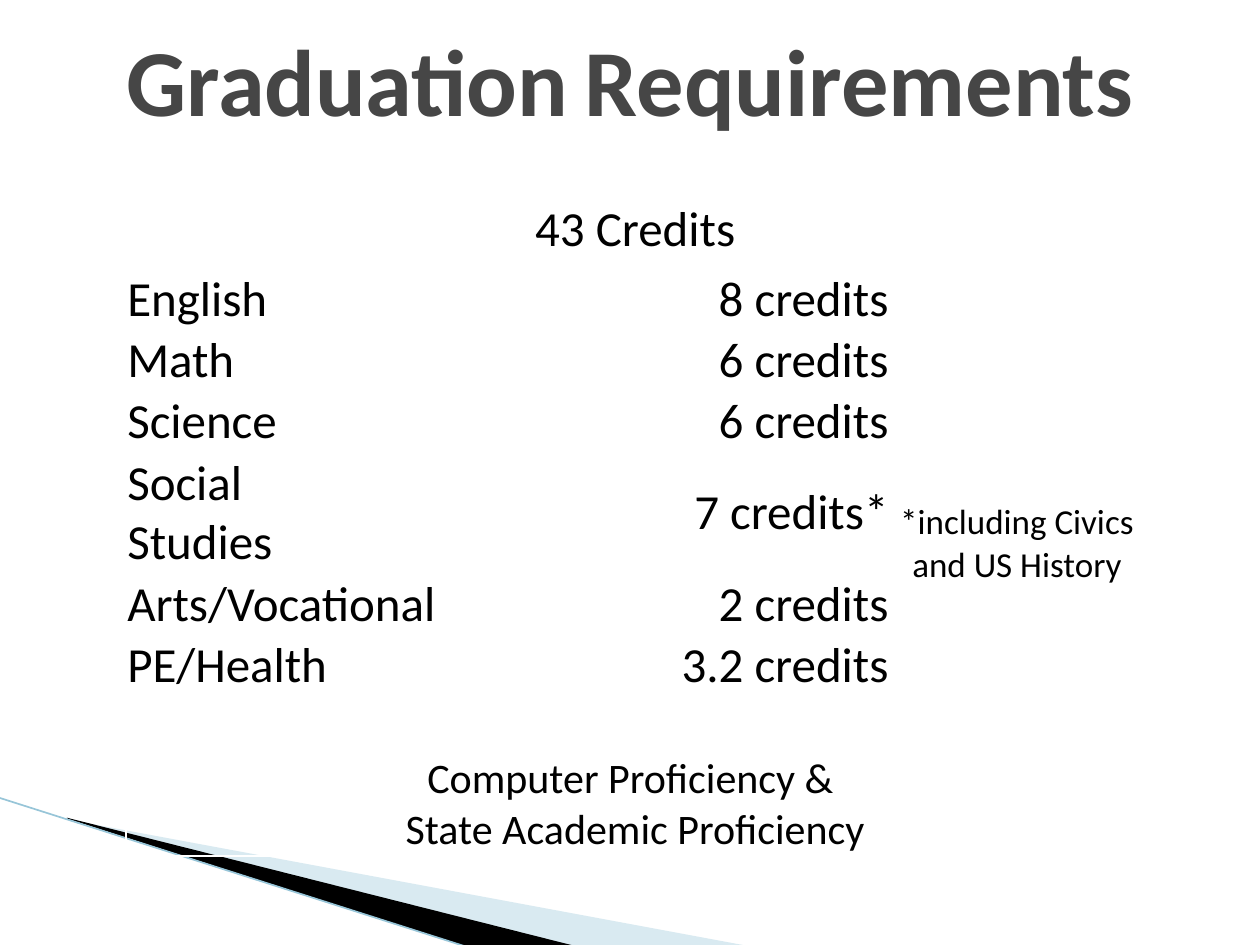
from lxml.etree import SubElement
from pptx import Presentation
from pptx.dml.color import RGBColor
from pptx.enum.shapes import MSO_CONNECTOR as Connector
from pptx.enum.text import MSO_ANCHOR as Anchor, PP_ALIGN as Align
from pptx.oxml import parse_xml
from pptx.oxml.ns import nsdecls, qn
from pptx.util import Pt

COLORS = {"title": "464646", "text": "000000", "border": "FFFFFF",
          "pale": "A0CBDC", "dark": "000000", "edge": "97C5D8"}
FONT = "Calibri"
TITLE = [("Graduation", 54), (" ", 41), ("Requirements", 54)]
TOTAL = "43 Credits"
SUBJECTS = [
    ("English", "8 credits"),
    ("Math", "6 credits"),
    ("Science", "6 credits"),
    ("Social Studies", "7 credits*"),
    ("Arts/Vocational", "2 credits"),
    ("PE/Health", "3.2 credits"),
]
FOOTNOTE = "*including Civics and US History"
PROFICIENCIES = ["Computer Proficiency & ", "State Academic Proficiency"]
WEDGES = [
    ("pale", 40, [(39.6, 468.5), (428.4, 540.7), (328.3, 540.7), (39.6, 468)]),
    ("dark", 100, [(38.2, 467.3), (329, 540.7), (267.8, 541.4), (38.9, 468)]),
]
EDGE = [(-0.7, 455.8), (267.8, 541.4)]
COLUMN_WIDTH, HEADER_HEIGHT, ROW_HEIGHT = 145.5, 45.4, 32.4
SOCIAL_ROW, ARTS_ROW, LAST_ROW = 4, 5, 8


def rgb(name):
    return RGBColor.from_string(COLORS[name])


def add_run(paragraph, text, size, color="text", bold=False):
    run = paragraph.add_run()
    run.text = text
    run.font.name, run.font.size, run.font.bold = FONT, Pt(size), bold
    run.font.color.rgb = rgb(color)


def add_wedge(shapes, color, opacity, corners):
    points = [(Pt(x), Pt(y)) for x, y in corners]
    builder = shapes.build_freeform(*points[0], scale=1.0)
    builder.add_line_segments(points[1:], close=True)
    wedge = builder.convert_to_shape()
    wedge.shadow.inherit = False
    wedge.line.fill.background()
    wedge.fill.solid()
    wedge.fill.fore_color.rgb = rgb(color)
    if opacity < 100:
        fill_color = wedge.fill._xPr.find(qn("a:solidFill"))[0]
        SubElement(fill_color, qn("a:alpha")).set("val", str(opacity * 1000))


def add_edge(shapes, start, end):
    edge = shapes.add_connector(Connector.STRAIGHT, *map(Pt, start + end))
    edge.line.color.rgb = rgb("edge")
    edge.line.width = Pt(0.95)
    SubElement(edge._element.spPr, qn("a:effectLst"))


def clear_cell(cell):
    cell.fill.background()
    properties = cell._tc.get_or_add_tcPr()
    for index, side in enumerate("LRTB"):
        properties.insert(index, parse_xml(
            f'<a:ln{side} {nsdecls("a")} w="{Pt(1)}"><a:solidFill>'
            f'<a:srgbClr val="{COLORS["border"]}"/></a:solidFill></a:ln{side}>'))


def write_cell(cell, lines, size, align):
    cell.vertical_anchor = Anchor.MIDDLE
    cell.margin_left = cell.margin_right = cell.margin_top = Pt(0.75)
    cell.margin_bottom = 0
    frame = cell.text_frame
    for index, line in enumerate(lines):
        paragraph = frame.add_paragraph() if index else frame.paragraphs[0]
        paragraph.alignment = align
        add_run(paragraph, line, size)


def add_credits(shapes):
    height = HEADER_HEIGHT + LAST_ROW * ROW_HEIGHT
    credits = shapes.add_table(LAST_ROW + 1, 4, Pt(72), Pt(108),
                               Pt(4 * COLUMN_WIDTH), Pt(height)).table
    credits.first_row = credits.horz_banding = False
    for column in credits.columns:
        column.width = Pt(COLUMN_WIDTH)
    for index, row in enumerate(credits.rows):
        row.height = Pt(ROW_HEIGHT if index else HEADER_HEIGHT)
    for cell in credits.iter_cells():
        clear_cell(cell)
    spans = [((0, 1), (0, 2)), ((SOCIAL_ROW, 3), (ARTS_ROW, 3)),
             ((ARTS_ROW, 0), (ARTS_ROW, 1)), ((LAST_ROW, 0), (LAST_ROW, 3))]
    for first, last in spans:
        credits.cell(*first).merge(credits.cell(*last))
    write_cell(credits.cell(0, 1), [TOTAL], 28, Align.CENTER)
    for row, (subject, amount) in enumerate(SUBJECTS, 1):
        write_cell(credits.cell(row, 0), [subject], 28, Align.LEFT)
        write_cell(credits.cell(row, 2), [amount], 28, Align.RIGHT)
    write_cell(credits.cell(SOCIAL_ROW, 3), [FOOTNOTE], 20, Align.CENTER)
    write_cell(credits.cell(LAST_ROW, 0), PROFICIENCIES, 24, Align.CENTER)


def main():
    """Build the graduation requirements slide."""
    deck = Presentation()
    deck.slide_width, deck.slide_height = Pt(720), Pt(540)
    slide = deck.slides.add_slide(deck.slide_layouts[5])
    for wedge in WEDGES:
        add_wedge(slide.shapes, *wedge)
    add_edge(slide.shapes, *EDGE)
    title = slide.shapes.title
    title.left, title.top, title.width, title.height = Pt(54), 0, Pt(612), Pt(90)
    title.text_frame.vertical_anchor = Anchor.MIDDLE
    heading = title.text_frame.paragraphs[0]
    heading.alignment = Align.CENTER
    for text, size in TITLE:
        add_run(heading, text, size, "title", True)
    add_credits(slide.shapes)
    deck.save("out.pptx")


if __name__ == "__main__":
    main()
